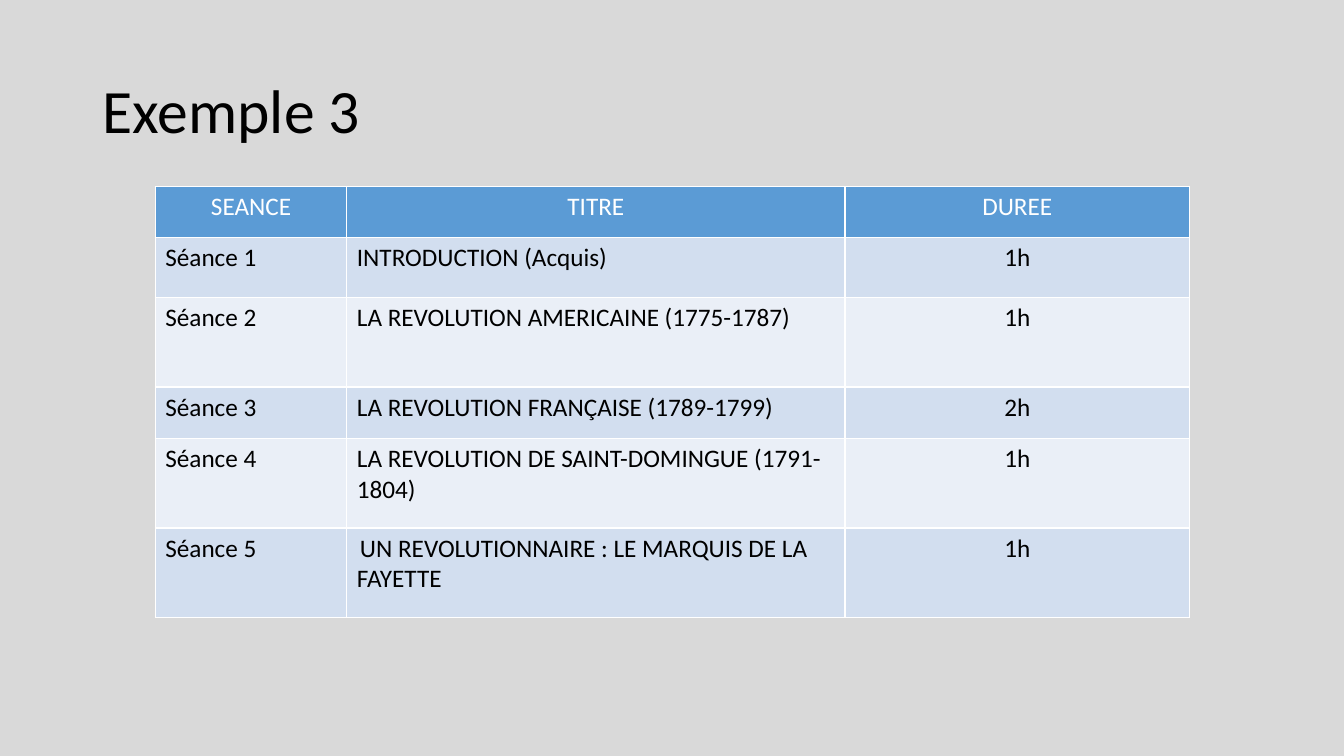
import pptx
import pptx.dml.color
import pptx.enum.text
import pptx.util

Inches = pptx.util.Inches
CENTER = pptx.enum.text.PP_ALIGN.CENTER


def color(value):
    return pptx.dml.color.RGBColor.from_string(value)


def add_run(paragraph, text, size, ink, name="Calibri", bold=False):
    run = paragraph.add_run()
    run.text = text
    font_format = {"size": pptx.util.Pt(size), "name": name, "bold": bold}
    for attribute, value in font_format.items():
        setattr(run.font, attribute, value)
    run.font.color.rgb = color(ink)


presentation = pptx.Presentation()
presentation.slide_width = Inches(13.33)
presentation.slide_height = Inches(7.5)
slide = presentation.slides.add_slide(presentation.slide_layouts[6])
slide.background.fill.solid()
slide.background.fill.fore_color.rgb = color("D9D9D9")

title = slide.shapes.add_textbox(Inches(0.92), Inches(0.4), Inches(11.5), Inches(1.45))
title.text_frame.word_wrap = True
title.text_frame.vertical_anchor = pptx.enum.text.MSO_ANCHOR.MIDDLE
title_paragraph = title.text_frame.paragraphs[0]
title_paragraph.line_spacing = 0.9
add_run(title_paragraph, "Exemple 3", 44, "000000")

sessions = [
    ("SEANCE", "TITRE", "DUREE"),
    ("Séance 1", "INTRODUCTION (Acquis)", "1h"),
    ("Séance 2", "LA REVOLUTION AMERICAINE (1775-1787)", "1h"),
    ("Séance 3", "LA REVOLUTION FRANÇAISE (1789-1799)", "2h"),
    ("Séance 4", "LA REVOLUTION DE SAINT-DOMINGUE (1791-1804)", "1h"),
    ("Séance 5", "UN REVOLUTIONNAIRE : LE MARQUIS DE LA FAYETTE", "1h"),
]
column_widths = [1.9, 4.94, 3.42]
row_heights = [0.51, 0.59, 0.89, 0.51, 0.89, 0.89]

table = slide.shapes.add_table(
    len(row_heights), len(column_widths), Inches(1.54), Inches(1.85),
    Inches(sum(column_widths)), Inches(sum(row_heights)),
).table
for column, width in zip(table.columns, column_widths):
    column.width = Inches(width)

for row_index, (session, height) in enumerate(zip(sessions, row_heights)):
    table.rows[row_index].height = Inches(height)
    is_header = row_index == 0
    band = "5B9BD5" if is_header else ("EAEFF7", "D2DEEF")[row_index % 2]
    for column_index, text in enumerate(session):
        cell = table.cell(row_index, column_index)
        cell.fill.solid()
        cell.fill.fore_color.rgb = color(band)
        paragraph = cell.text_frame.paragraphs[0]
        if is_header or column_index == 2:
            paragraph.alignment = CENTER
        if text.startswith("UN REVOLUTIONNAIRE"):
            add_run(paragraph, " ", 10, "000000", "Cambria", True)
        add_run(paragraph, text, 18, "FFFFFF" if is_header else "000000")

presentation.save("out.pptx")
